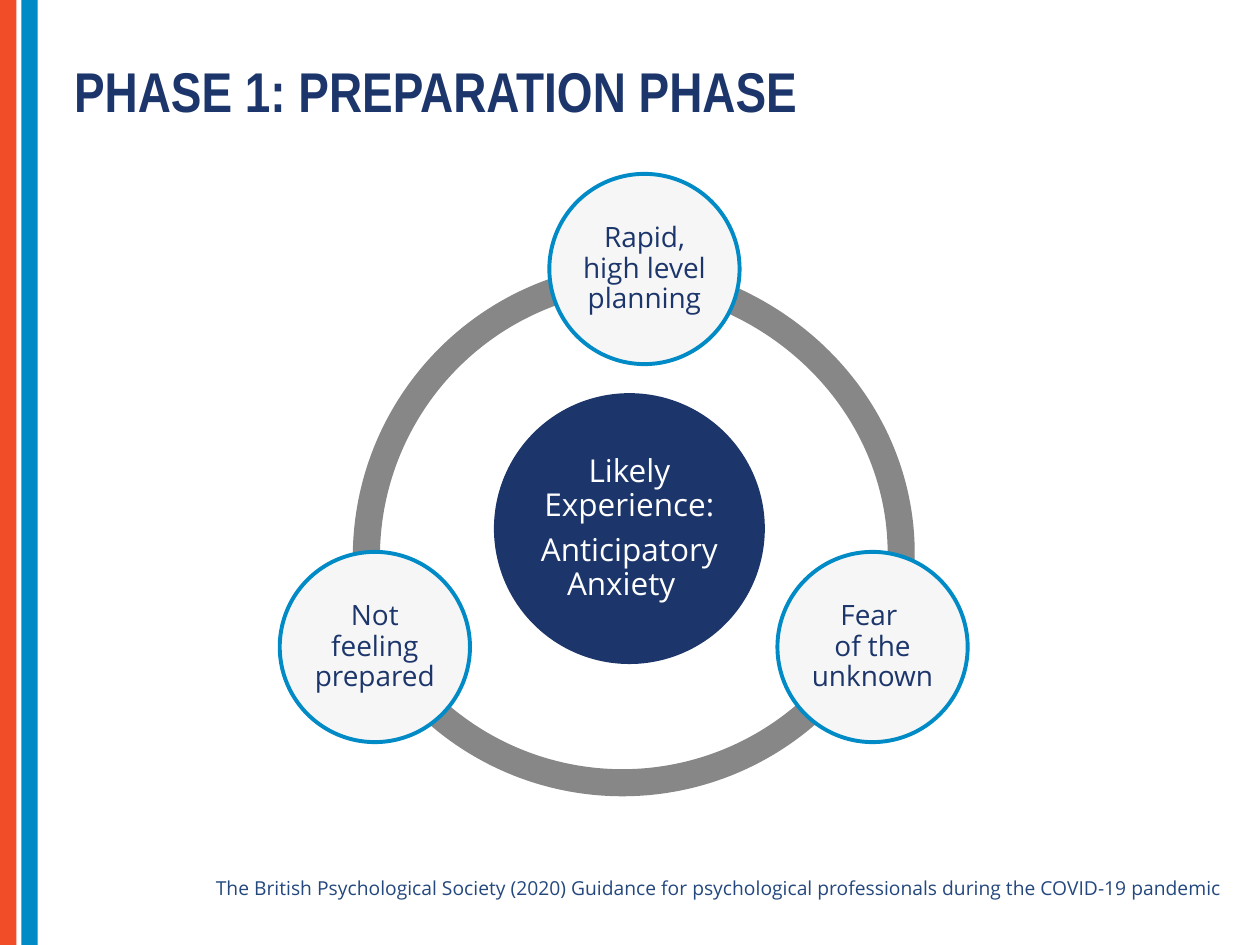
import pptx
import pptx.dml.color
import pptx.enum.shapes
import pptx.enum.text
import pptx.util

RGBColor = pptx.dml.color.RGBColor
Shape = pptx.enum.shapes.MSO_SHAPE
Align = pptx.enum.text.PP_ALIGN
Anchor = pptx.enum.text.MSO_ANCHOR

EMU_PER_PX = 9144  # 100 px to the inch

WHITE = RGBColor(0xFF, 0xFF, 0xFF)
NAVY = RGBColor(0x1C, 0x36, 0x6B)
SLATE = RGBColor(0x24, 0x48, 0x7E)
BLUE = RGBColor(0x00, 0x8A, 0xC6)
ORANGE = RGBColor(0xF2, 0x4D, 0x29)
GRAY = RGBColor(0x87, 0x87, 0x87)
PALE = RGBColor(0xF6, 0xF6, 0xF6)


def px(length):
    return pptx.util.Emu(length * EMU_PER_PX)


class SlideBuilder:
    """Holds the style and the current slide."""

    heading_font = "Arial Narrow"
    body_font = "Open Sans"
    line_spacing = 0.9

    def __init__(self, page):
        self.page = page

    def shape(self, kind, left, top, width, height, fill, line=None):
        item = self.page.shapes.add_shape(kind, px(left), px(top), px(width), px(height))
        item.shadow.inherit = False
        item.fill.solid()
        item.fill.fore_color.rgb = fill
        if line is None:
            item.line.fill.background()
        else:
            item.line.color.rgb = line
            item.line.width = pptx.util.Pt(2.25)
        return item

    def arc(self, left, top, width, height, start, end):
        item = self.shape(Shape.BLOCK_ARC, left, top, width, height, GRAY)
        for index, value in enumerate((start, end, 0.046)):
            item.adjustments[index] = value

    def text(self, left, top, width, height, lines, size, color, font=None,
             bold=False, align=Align.LEFT, anchor=Anchor.TOP, margins=(10, 5), after=0):
        box = self.page.shapes.add_textbox(px(left), px(top), px(width), px(height))
        frame = box.text_frame
        side, edge = map(px, margins)
        frame_format = {
            "word_wrap": True, "vertical_anchor": anchor,
            "margin_left": side, "margin_right": side,
            "margin_top": edge, "margin_bottom": edge,
        }
        para_format = {"alignment": align, "line_spacing": self.line_spacing,
                       "space_after": pptx.util.Pt(after)}
        font_format = {"name": font or self.body_font, "size": pptx.util.Pt(size),
                       "bold": bold}
        for name, value in frame_format.items():
            setattr(frame, name, value)
        frame.text = "\n".join(lines)
        for para in frame.paragraphs:
            for name, value in para_format.items():
                setattr(para, name, value)
            for span in para.runs:
                for name, value in font_format.items():
                    setattr(span.font, name, value)
                span.font.color.rgb = color

    def circle(self, left, top, size, inset, margin, lines, points, color, fill, line=None):
        self.shape(Shape.OVAL, left, top, size, size, fill, line)
        inner = size - 2 * inset
        self.text(left + inset, top + inset, inner, inner, lines, points, color,
                  align=Align.CENTER, anchor=Anchor.MIDDLE,
                  margins=(margin, margin), after=points * 0.35)


def main():
    deck = pptx.Presentation()
    deck.slide_width, deck.slide_height = px(1000), px(750)
    builder = SlideBuilder(deck.slides.add_slide(deck.slide_layouts[6]))

    # Side stripes
    for left, color in ((0, ORANGE), (17, BLUE)):
        builder.shape(Shape.RECTANGLE, left, 0, 13, 750, color)

    # Title
    builder.text(49, 46, 740, 52, ["PHASE 1: PREPARATION PHASE"], 32, NAVY,
                 font=builder.heading_font, bold=True)

    # Ring of arcs: left, bottom, right
    builder.arc(280, 208, 468, 468, 97.06, 161.52)
    builder.arc(260, 164, 468, 468, 18.17, 89.84)
    builder.arc(227, 205, 499, 468, 167.32, 11.37)

    # Centre
    builder.circle(392, 312, 215, 32, 3, ["Likely Experience:", "Anticipatory Anxiety  "],
                   18, WHITE, NAVY)

    # Contributing factors; \v is a line break
    for left, top, label in (
        (436, 138, "Rapid, high level planning"),
        (617, 438, "Fear \vof the unknown"),
        (222, 438, "Not feeling prepared"),
    ):
        builder.circle(left, top, 151, 22, 2, [label], 16, NAVY, PALE, BLUE)

    # Citation
    builder.text(59, 693, 921, 36,
                 ["The British Psychological Society (2020) Guidance for psychological "
                  "professionals during the COVID-19 pandemic"],
                 11, SLATE, align=Align.RIGHT)

    deck.save("out.pptx")


if __name__ == "__main__":
    main()
